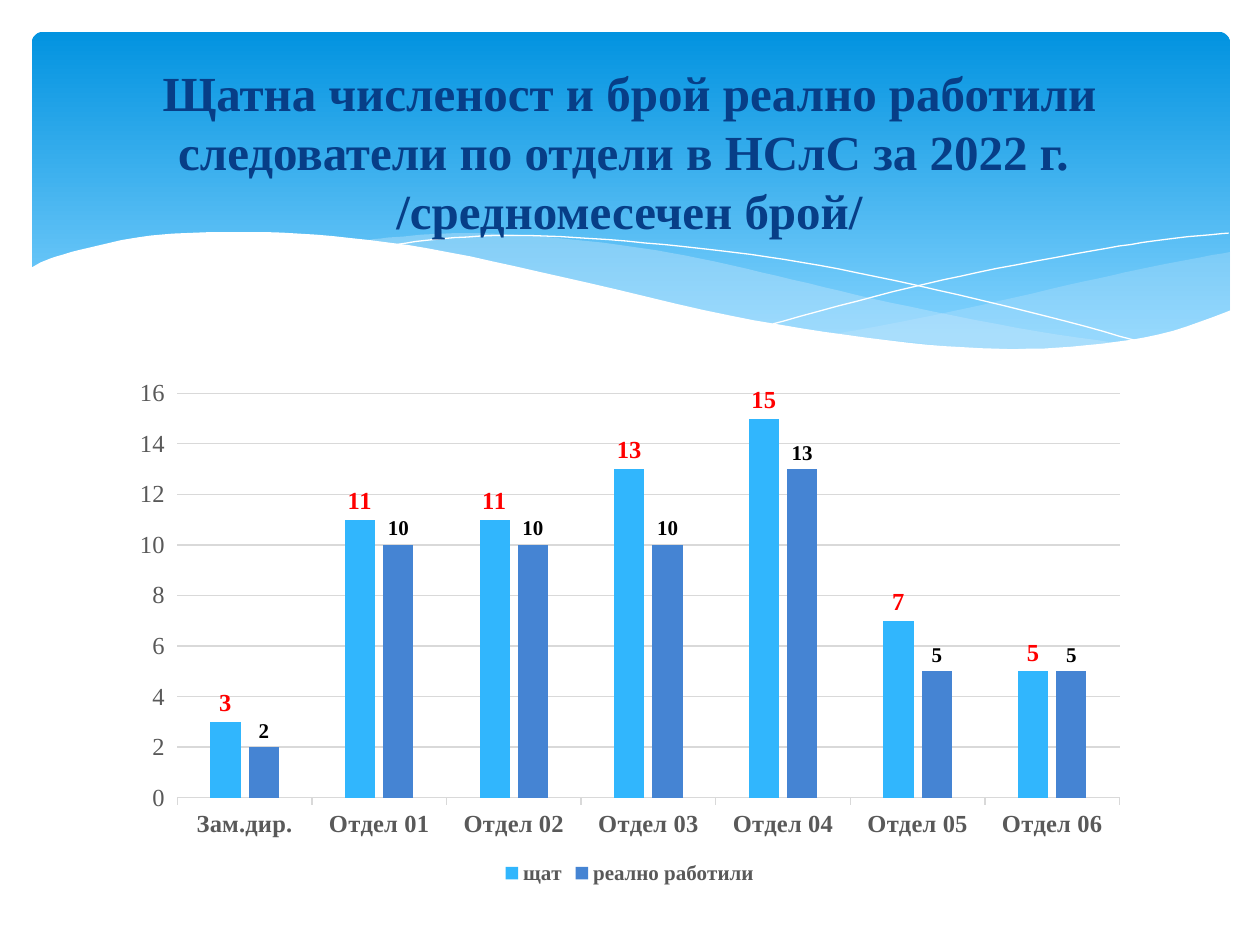
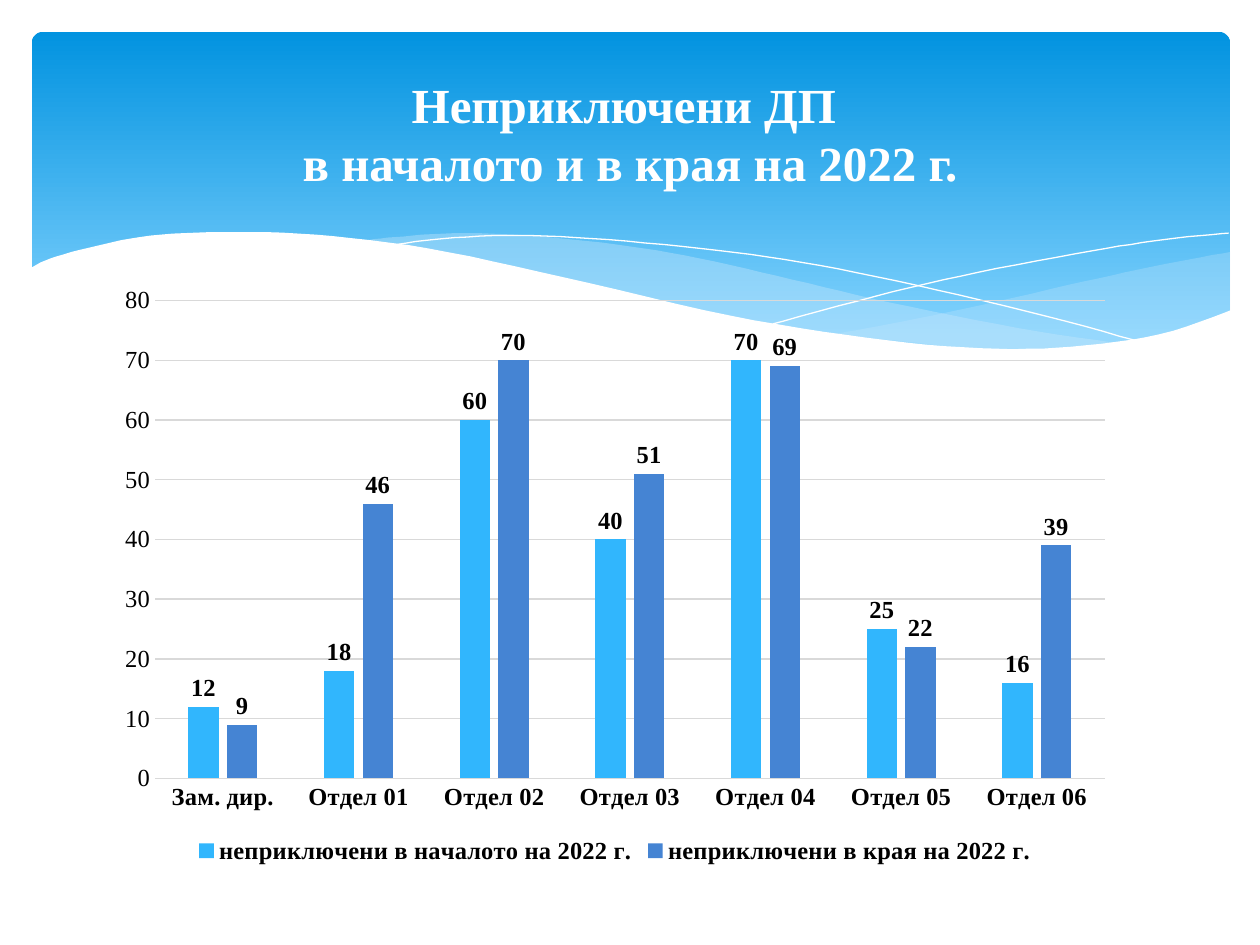
from pptx import Presentation
from pptx.chart.data import CategoryChartData
from pptx.dml.color import RGBColor
from pptx.enum.chart import XL_CHART_TYPE, XL_LABEL_POSITION, XL_LEGEND_POSITION, XL_TICK_MARK
from pptx.enum.shapes import MSO_SHAPE
from pptx.enum.text import MSO_ANCHOR, PP_ALIGN
from pptx.oxml.ns import qn
from pptx.util import Cm, Pt
from lxml import etree

CLUSTERED = XL_CHART_TYPE.COLUMN_CLUSTERED
OUTSIDE_END = XL_LABEL_POSITION.OUTSIDE_END
LEGEND_BOTTOM = XL_LEGEND_POSITION.BOTTOM
TICK_OUT, TICK_NONE = XL_TICK_MARK.OUTSIDE, XL_TICK_MARK.NONE
ROUNDED = MSO_SHAPE.ROUNDED_RECTANGLE
MIDDLE, CENTER = MSO_ANCHOR.MIDDLE, PP_ALIGN.CENTER

FONT = "Times New Roman"
WHITE, BLACK, RED, GREY, NAVY = "FFFFFF", "000000", "FF0000", "595959", "073E87"
BAND_TOP, BAND_BOTTOM, SWELL = "0293E0", "83D3FE", "C6E7FC"
GRID = "D9D9D9"
SERIES_COLORS = ["31B6FD", "4584D3"]

# Boxes are left, top, width, height in centimetres
BAND_BOX = (0.64, 0.64, 24.16, 6.86)

# Curve knots in centimetres from the band's top left corner
WAVE_EDGE = [(24.18, 5.61), (22.73, 6.1), (20.96, 6.35), (19.13, 6.38), (16.84, 6.17),
             (14.07, 5.72), (10.72, 4.95), (8, 4.37), (5.72, 4.09), (3.86, 4.04),
             (2.39, 4.11), (1.3, 4.32), (0.38, 4.57), (-0.05, 4.78)]
WAVE_BASE = [(-0.05, 7.72), (24.18, 7.72)]
RIGHT_TOP = [(24.16, 4.44), (22.76, 4.7), (21.23, 5.03), (19.15, 5.51), (17.3, 5.89),
             (16.15, 6.1)]
RIGHT_BOTTOM = [(16.15, 6.1), (17.63, 6.25), (18.9, 6.38), (20.29, 6.4), (21.74, 6.3),
                (23.11, 6.02), (24.16, 5.64)]
MIDDLE_TOP = [(22.05, 6.3), (19.86, 5.97), (17.3, 5.46), (15.34, 5), (13.46, 4.57),
              (11.79, 4.29), (10.03, 4.11), (8.53, 4.06), (7.32, 4.14), (6.63, 4.22)]
MIDDLE_BOTTOM = [(6.63, 4.22), (8.56, 4.52), (10.77, 5), (12.83, 5.46), (15.06, 5.92),
                 (17.02, 6.22), (18.69, 6.4), (20.14, 6.43), (21.13, 6.4), (22.05, 6.3)]
FALLING_LINE = [(7.21, 4.32), (8.1, 4.19), (9.55, 4.11), (11.28, 4.17), (13.49, 4.37),
                (15.52, 4.65), (17.83, 5.11), (20.47, 5.74), (22.4, 6.27)]
RISING_LINE = [(14.94, 5.89), (17.02, 5.33), (19.08, 4.85), (21.36, 4.42), (22.83, 4.19),
               (24.13, 4.06)]

DEPARTMENTS = [f"Отдел 0{number}" for number in range(1, 7)]

SLIDES = [
    {
        "title": "Щатна численост и брой реално работили следователи по отдели "
                 "в НСлС за 2022 г. \v/средномесечен брой/",
        "title_box": (0.89, 0.74, 23.6, 4.6),
        "title_color": NAVY,
        "chart_box": (2.41, 7.44, 20.57, 10.49),
        "categories": ["Зам.дир."] + DEPARTMENTS,
        "series": {"щат": (3, 11, 11, 13, 15, 7, 5),
                   "реално работили": (2, 10, 10, 10, 13, 5, 5)},
        "label_styles": [(14, RED), (12, BLACK)],
        "axis_color": GREY,
        "legend_size": 12,
        "tick_mark": TICK_OUT,
        "scale": {"maximum_scale": 16, "major_unit": 2},
    },
    {
        "title": "Неприключени ДП \vв началото и в края на 2022 г.",
        "title_box": (1.27, 0.94, 22.86, 3.48),
        "title_color": WHITE,
        "chart_box": (2.11, 5.54, 20.57, 11.99),
        "categories": ["Зам. дир."] + DEPARTMENTS,
        "series": {"неприключени в началото на 2022 г.": (12, 18, 60, 40, 70, 25, 16),
                   "неприключени в края на 2022 г.": (9, 46, 70, 51, 69, 22, 39)},
        "label_styles": [(14, BLACK), (14, BLACK)],
        "axis_color": BLACK,
        "legend_size": 14,
        "tick_mark": TICK_NONE,
        "scale": {"maximum_scale": 80, "major_unit": 10},
    },
]


def rgb(color):
    return RGBColor.from_string(color)


def in_cm(box):
    return [Cm(length) for length in box]


def apply(target, values):
    for name, value in values.items():
        setattr(target, name, value)


def style_font(font, size, color, bold=True):
    apply(font, {"name": FONT, "size": Pt(size), "bold": bold})
    font.color.rgb = rgb(color)


def style_line(line, color, width=0.75):
    line.color.rgb = rgb(color)
    line.width = Pt(width)


def smooth(knots, steps=6):
    """Points of a Catmull-Rom curve that runs through the knots."""
    padded = [knots[0], *knots, knots[-1]]
    points = [knots[0]]
    for a, b, c, d in zip(padded, padded[1:], padded[2:], padded[3:]):
        for step in range(1, steps + 1):
            t = step / steps
            points.append(tuple(
                q + t / 2 * (r - p + t * (2 * p - 5 * q + 4 * r - s
                                          + t * (3 * q - p - 3 * r + s)))
                for p, q, r, s in zip(a, b, c, d)))
    return points


def add_curve(slide, box, points, fill=None, opacity=100, closed=True):
    left, top = in_cm(box[:2])
    units = [(round(x * 100), round(y * 100)) for x, y in points]
    builder = slide.shapes.build_freeform(*units[0], scale=Cm(0.01))
    builder.add_line_segments(units[1:], close=closed)
    curve = builder.convert_to_shape(left, top)
    curve.shadow.inherit = False
    if fill is None:
        curve.fill.background()
        style_line(curve.line, WHITE, 0)
        return
    curve.fill.solid()
    curve.fill.fore_color.rgb = rgb(fill)
    curve.line.fill.background()
    if opacity < 100:
        color = curve.fill._xPr.find(qn("a:solidFill")).find(qn("a:srgbClr"))
        etree.SubElement(color, qn("a:alpha"), val=str(opacity * 1000))


def add_band(slide, box):
    # Gradient panel
    panel = slide.shapes.add_shape(ROUNDED, *in_cm(box))
    panel.adjustments[0] = 0.034
    panel.shadow.inherit = False
    panel.line.fill.background()
    panel.fill.gradient()
    panel.fill.gradient_angle = 270
    stops = zip(panel.fill.gradient_stops, (BAND_TOP, BAND_BOTTOM), (0, 0.9))
    for stop, color, position in stops:
        stop.color.rgb = rgb(color)
        stop.position = position

    # Translucent swells, thin lines and the white wave in front
    add_curve(slide, box, smooth(RIGHT_TOP) + smooth(RIGHT_BOTTOM), SWELL, 29)
    add_curve(slide, box, smooth(MIDDLE_TOP) + smooth(MIDDLE_BOTTOM), SWELL, 40)
    for knots in (FALLING_LINE, RISING_LINE):
        add_curve(slide, box, smooth(knots), closed=False)
    add_curve(slide, box, smooth(WAVE_EDGE) + WAVE_BASE, WHITE)


def add_title(slide, box, text, color):
    frame = slide.shapes.add_textbox(*in_cm(box)).text_frame
    apply(frame, {"text": text, "word_wrap": True, "vertical_anchor": MIDDLE})
    paragraph = frame.paragraphs[0]
    paragraph.alignment = CENTER
    for run in paragraph.runs:
        style_font(run.font, 28, color)


def add_department_chart(slide, box, content):
    data = CategoryChartData()
    data.categories = content["categories"]
    for name, values in content["series"].items():
        data.add_series(name, values)
    chart = slide.shapes.add_chart(CLUSTERED, *in_cm(box), data).chart
    chart.has_title = False
    style_font(chart.font, 14, BLACK, False)

    # Columns and their values
    plot = chart.plots[0]
    apply(plot, {"gap_width": 219, "overlap": -27, "vary_by_categories": False})
    for series, color, label_style in zip(plot.series, SERIES_COLORS, content["label_styles"]):
        series.format.fill.solid()
        series.format.fill.fore_color.rgb = rgb(color)
        apply(series.data_labels, {"show_value": True, "position": OUTSIDE_END})
        style_font(series.data_labels.font, *label_style)

    # Axes
    departments, counts = chart.category_axis, chart.value_axis
    for axis, bold in ((departments, True), (counts, False)):
        apply(axis, {"major_tick_mark": content["tick_mark"], "minor_tick_mark": TICK_NONE})
        style_font(axis.tick_labels.font, 14, content["axis_color"], bold)
    style_line(departments.format.line, GRID)
    counts.format.line.fill.background()
    apply(counts, {"minimum_scale": 0, "has_major_gridlines": True, **content["scale"]})
    style_line(counts.major_gridlines.format.line, GRID)

    # Legend
    chart.has_legend = True
    apply(chart.legend, {"position": LEGEND_BOTTOM, "include_in_layout": False})
    style_font(chart.legend.font, content["legend_size"], content["axis_color"])


def main():
    deck = Presentation()
    apply(deck, {"slide_width": Cm(25.4), "slide_height": Cm(19.05)})
    blank = deck.slide_layouts[6]
    for content in SLIDES:
        slide = deck.slides.add_slide(blank)
        add_band(slide, BAND_BOX)
        add_department_chart(slide, content["chart_box"], content)
        add_title(slide, content["title_box"], content["title"], content["title_color"])
    deck.save("out.pptx")


if __name__ == "__main__":
    main()
